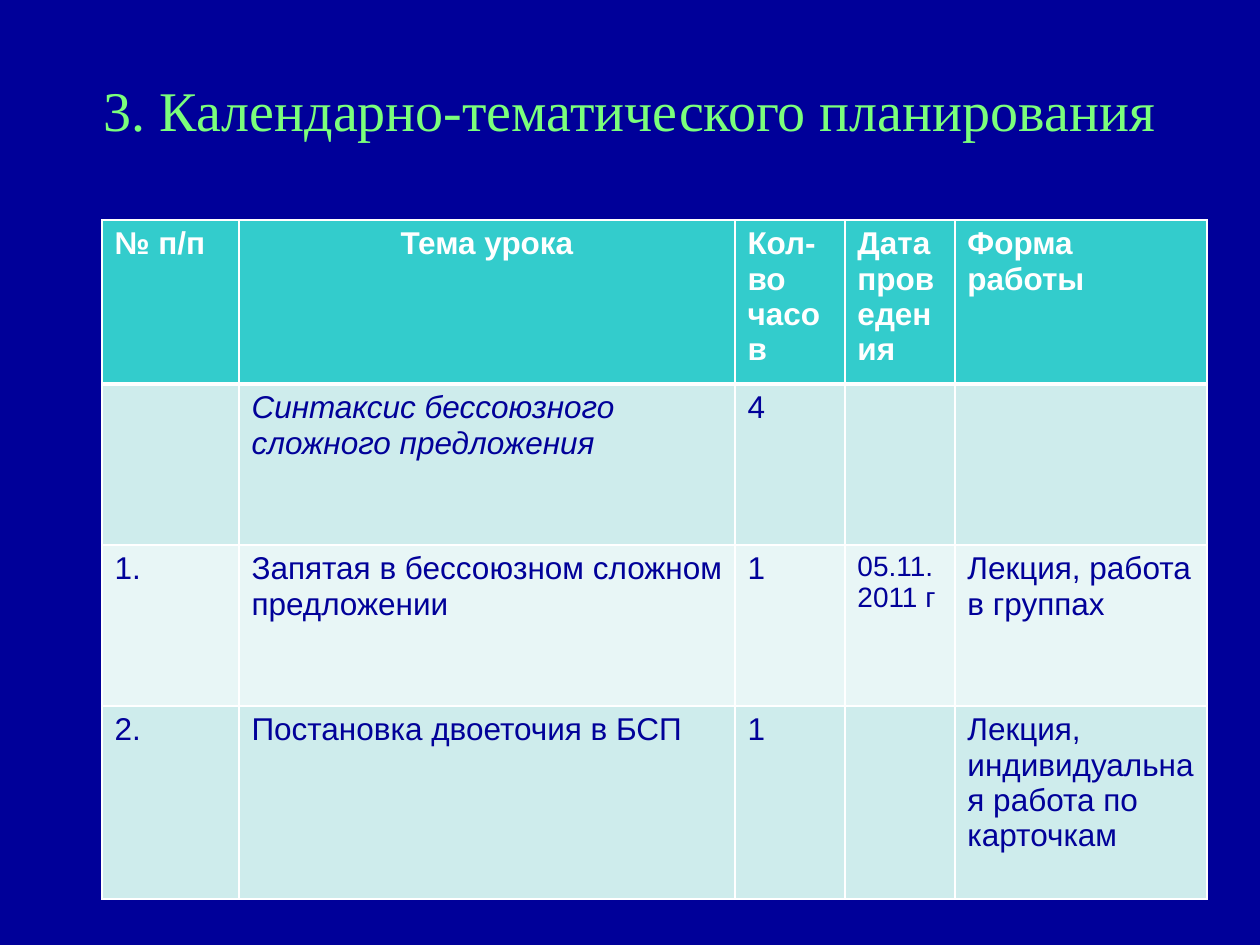
from lxml import etree
from pptx import Presentation
from pptx import util as u
from pptx.dml.color import RGBColor
from pptx.enum import text
from pptx.oxml.ns import qn

SCALE = 914400 / 126
HUES = {
    "back": "000099", "title": "7BFF7B", "head": "33CCCC", "ink": "010199",
    "white": "FFFFFF", "dark": "CEECEC", "light": "E8F6F6",
}
COLS = [137, 496, 110, 110, 252]
ROWS = [164, 161, 161, 193]
PLAN = [
    ["№ п/п", "Тема урока", "Кол-во часов", "Дата проведения", "Форма работы"],
    ["", "Синтаксис бессоюзного сложного предложения", "4", "", ""],
    ["1.", "Запятая в бессоюзном сложном предложении", "1", "05.11.2011 г",
     "Лекция, работа в группах"],
    ["2.", "Постановка двоеточия в БСП", "1", "",
     "Лекция, индивидуальная работа по карточкам"],
]
BODY = {"name": "Arial", "size": u.Pt(18), "bold": False, "italic": False}
STYLES = {
    (0, col): {"bold": True} for col in range(len(COLS))
} | {(1, 1): {"italic": True}, (2, 3): {"size": u.Pt(16)}}


def px(count):
    return u.Emu(round(count * SCALE))


def hue(name):
    return RGBColor.from_string(HUES[name])


def set_all(item, values):
    for key, value in values.items():
        setattr(item, key, value)


def write(frame, words, tint, style, align):
    para = frame.paragraphs[0]
    para.alignment = align
    run = para.add_run()
    run.text = words
    set_all(run.font, style)
    run.font.color.rgb = hue(tint)


def add_edge(cell, side, width):
    edge = etree.SubElement(cell._tc.get_or_add_tcPr(), qn(f"a:ln{side}"),
                            w=str(u.Pt(width)))
    fill = etree.SubElement(edge, qn("a:solidFill"))
    etree.SubElement(fill, qn("a:srgbClr"), val=HUES["white"])


def add_title(slide):
    title = slide.shapes.title
    set_all(title, {"left": px(63), "top": px(40),
                    "width": px(1134), "height": px(139)})
    frame = title.text_frame
    set_all(frame, {"word_wrap": True,
                    "vertical_anchor": text.MSO_ANCHOR.MIDDLE})
    style = {"name": "Times New Roman", "size": u.Pt(32)}
    write(frame, "3. Календарно-тематического планирования", "title", style,
          text.PP_ALIGN.CENTER)


def fill_cell(cell, row, col, words):
    for side in "LRTB":
        thick = (row, side) in [(0, "B"), (1, "T")]
        add_edge(cell, side, 3 if thick else 1)
    cell.fill.solid()
    cell.fill.fore_color.rgb = hue(
        "head" if row == 0 else "dark" if row % 2 else "light")
    if words:
        align = text.PP_ALIGN.CENTER if (row, col) == (0, 1) else text.PP_ALIGN.LEFT
        write(cell.text_frame, words, "ink" if row else "white",
              BODY | STYLES.get((row, col), {}), align)


def add_plan(slide):
    table = slide.shapes.add_table(
        len(ROWS), len(COLS), px(102), px(220), px(sum(COLS)), px(sum(ROWS))).table
    for col, width in zip(table.columns, COLS):
        col.width = px(width)
    for row, height in zip(table.rows, ROWS):
        row.height = px(height)
    for row, line in enumerate(PLAN):
        for col, words in enumerate(line):
            fill_cell(table.cell(row, col), row, col, words)


def main():
    deck = Presentation()
    set_all(deck, {"slide_width": px(1260), "slide_height": px(945)})
    slide = deck.slides.add_slide(deck.slide_layouts[5])
    slide.background.fill.solid()
    slide.background.fill.fore_color.rgb = hue("back")
    add_title(slide)
    add_plan(slide)
    deck.save("out.pptx")


if __name__ == "__main__":
    main()
